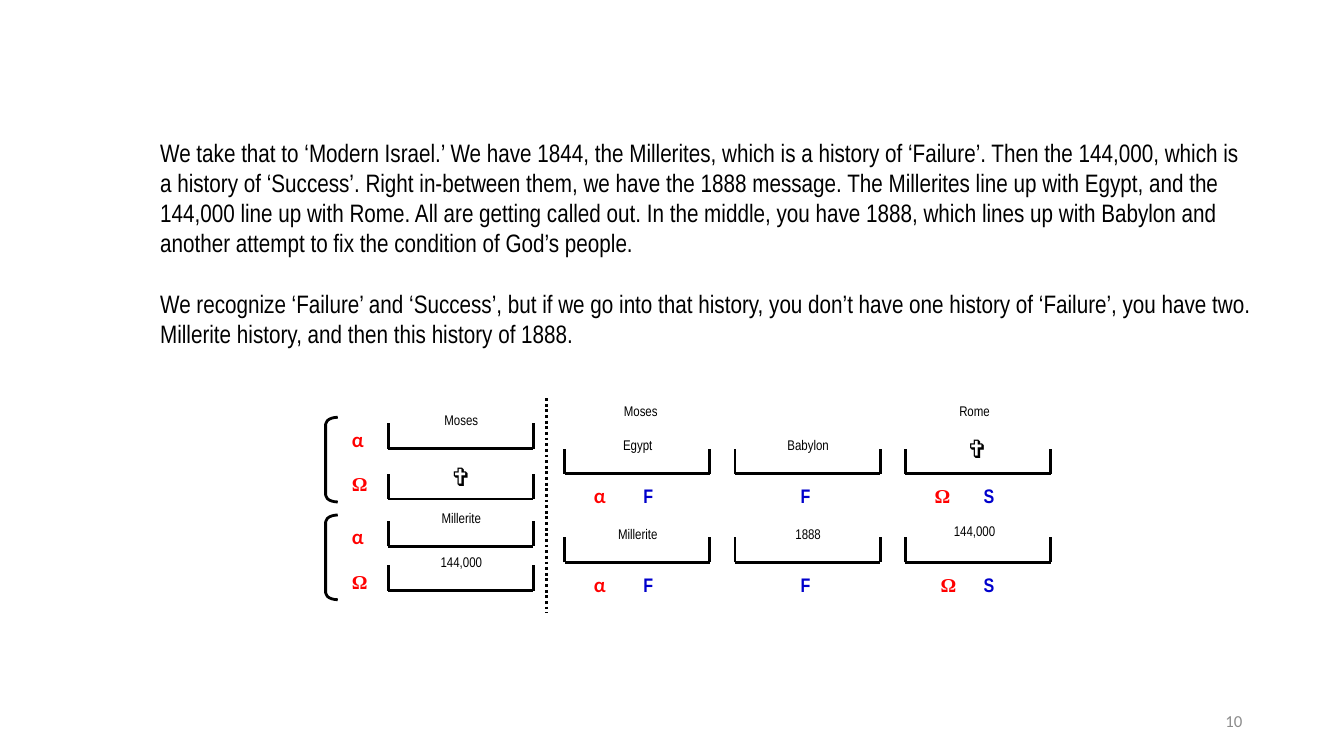
"""Build the slide on the lines of Modern Israel."""
from dataclasses import dataclass

from lxml.etree import SubElement
from pptx import Presentation
from pptx.dml.color import RGBColor as RGB
from pptx.enum.dml import MSO_LINE
from pptx.enum.shapes import MSO_CONNECTOR, MSO_SHAPE
from pptx.enum.text import MSO_ANCHOR as ANCHOR, PP_ALIGN as ALIGN
from pptx.oxml.ns import qn
from pptx.util import Inches, Pt


@dataclass(frozen=True)
class Style:
    font: str
    size: float
    color: str
    bold: bool = False


@dataclass(frozen=True)
class Theme:
    line: str = "000000"
    line_width: float = 2
    body: Style = Style("Arial Narrow", 18, "000000")
    label: Style = Style("Arial Narrow", 10, "000000")
    cross: Style = Style("Arial", 18, "000000")
    alpha: Style = Style("Lato", 14, "FF0000", True)
    omega: Style = Style("Times New Roman", 14, "FF0000", True)
    outcome: Style = Style("Arial Narrow", 14, "0000CC", True)
    number: Style = Style("Calibri", 12, "8C8C8C")


@dataclass(frozen=True)
class Tray:
    x: float
    base: float
    text: str
    dx: float = 0.35
    rise: float = 0.41


@dataclass(frozen=True)
class Mark:
    x: float
    y: float
    text: str


THEME = Theme()
TRAY_WIDTH, TRAY_DEPTH = 1.44, 0.25
LEFT, RIGHT, STEP = 3.85, 5.6, 1.69
CROSS = "✞"
COLUMNS = [RIGHT + i * STEP for i in range(3)]
UPPER, LOWER = 4.7, 5.58
MARK_DROP = 0.06

PARAGRAPHS = (
    "We take that to ‘Modern Israel.’ We have 1844, the Millerites, which is a history of "
    "‘Failure’. Then the 144,000, which is a history of ‘Success’. Right in-between them, we "
    "have the 1888 message. The Millerites line up with Egypt, and the 144,000 line up with "
    "Rome. All are getting called out. In the middle, you have 1888, which lines up with "
    "Babylon and another attempt to fix the condition of God’s people.",
    "We recognize ‘Failure’ and ‘Success’, but if we go into that history, you don’t have one "
    "history of ‘Failure’, you have two. Millerite history, and then this history of 1888.",
)
TRAYS = (
    Tray(LEFT, 4.45, "Moses"),
    Tray(LEFT, 4.95, CROSS),
    Tray(LEFT, 5.42, "Millerite"),
    Tray(LEFT, 5.86, "144,000"),
    Tray(COLUMNS[0], UPPER, "Egypt"),
    Tray(COLUMNS[1], UPPER, "Babylon"),
    Tray(COLUMNS[2], UPPER, CROSS, 0.34, 0.44),
    Tray(COLUMNS[0], LOWER, "Millerite"),
    Tray(COLUMNS[1], LOWER, "1888"),
    Tray(COLUMNS[2], LOWER, "144,000", 0.31, 0.44),
)
HEADINGS = (Mark(5.98, 3.95, "Moses"), Mark(9.29, 3.95, "Rome"))
GREEK = (
    Mark(3.45, 4.2, "α"),
    Mark(3.45, 4.64, "Ω"),
    Mark(3.45, 5.17, "α"),
    Mark(3.45, 5.61, "Ω"),
    Mark(5.85, UPPER + MARK_DROP, "α"),
    Mark(5.85, LOWER + MARK_DROP, "α"),
    Mark(9.23, UPPER + MARK_DROP, "Ω"),
    Mark(9.29, LOWER + MARK_DROP, "Ω"),
)
OUTCOMES = tuple(
    Mark(x, base + MARK_DROP, text)
    for base in (UPPER, LOWER)
    for x, text in ((6.29, "F"), (7.85, "F"), (9.67, "S"))
)
BRACKET_TOPS = (4.14, 5.11)


def add_text(s, *texts: str, x: float, y: float, w: float, h: float, style: Style,
             align=ALIGN.LEFT, anchor=ANCHOR.TOP, inset: float | None = 0.04,
             gap: float = 0) -> None:
    """Add a text box with one paragraph per text."""
    tf = s.shapes.add_textbox(Inches(x), Inches(y), Inches(w), Inches(h)).text_frame
    tf.word_wrap = True
    tf.vertical_anchor = anchor
    if inset is not None:
        tf.margin_left = tf.margin_right = Inches(inset)
        tf.margin_top = tf.margin_bottom = Inches(inset)
    for i, text in enumerate(texts):
        p = tf.add_paragraph() if i else tf.paragraphs[0]
        p.alignment = align
        p.space_before = Pt(gap if i else 0)
        r = p.add_run()
        r.text = text
        r.font.name = style.font
        r.font.size = Pt(style.size)
        r.font.bold = style.bold
        r.font.color.rgb = RGB.from_string(style.color)


def set_line(sp) -> None:
    """Give a shape or connector the theme line."""
    sp.line.color.rgb = RGB.from_string(THEME.line)
    sp.line.width = Pt(THEME.line_width)


def add_line(s, x1: float, y1: float, x2: float, y2: float, dotted: bool = False) -> None:
    """Draw a straight line without a shadow."""
    sp = s.shapes.add_connector(MSO_CONNECTOR.STRAIGHT, Inches(x1), Inches(y1),
                                Inches(x2), Inches(y2))
    set_line(sp)
    if dotted:
        sp.line.dash_style = MSO_LINE.ROUND_DOT
    SubElement(sp._element.spPr, qn("a:effectLst"))


def add_tray(s, tray: Tray) -> None:
    """Draw an open-topped tray and its label."""
    right = tray.x + TRAY_WIDTH
    add_line(s, tray.x, tray.base, right, tray.base)
    for x in (right, tray.x):
        add_line(s, x, tray.base, x, tray.base - TRAY_DEPTH)
    add_text(s, tray.text, x=tray.x + tray.dx, y=tray.base - tray.rise, w=0.75, h=0.31,
             style=THEME.cross if tray.text == CROSS else THEME.label, align=ALIGN.CENTER)


def add_bracket(s, top: float) -> None:
    """Draw a left bracket joining two trays."""
    sp = s.shapes.add_shape(MSO_SHAPE.LEFT_BRACKET, Inches(3.23), Inches(top),
                            Inches(0.12), Inches(0.84))
    sp.adjustments[0] = 0.56
    sp.shadow.inherit = False
    sp.fill.background()
    set_line(sp)


def main() -> None:
    """Build and save the slide."""
    prs = Presentation()
    prs.slide_width, prs.slide_height = Inches(13.33), Inches(7.5)
    s = prs.slides.add_slide(prs.slide_layouts[6])
    add_text(s, "10", x=9.42, y=6.95, w=3, h=0.4, style=THEME.number,
             align=ALIGN.RIGHT, anchor=ANCHOR.MIDDLE, inset=None)
    add_text(s, *PARAGRAPHS, x=1.49, y=1.31, w=11.07, h=2.22, style=THEME.body,
             inset=None, gap=21.5)
    for tray in TRAYS:
        add_tray(s, tray)
    for top in BRACKET_TOPS:
        add_bracket(s, top)
    for m in HEADINGS:
        add_text(s, m.text, x=m.x, y=m.y, w=0.75, h=0.25, style=THEME.label,
                 align=ALIGN.CENTER)
    for m in GREEK:
        add_text(s, m.text, x=m.x, y=m.y, w=0.33, h=0.25,
                 style=THEME.alpha if m.text == "α" else THEME.omega)
    for m in OUTCOMES:
        add_text(s, m.text, x=m.x, y=m.y, w=0.28, h=0.25, style=THEME.outcome,
                 align=ALIGN.CENTER)
    add_line(s, 5.42, 3.95, 5.42, 6.08, dotted=True)
    prs.save("out.pptx")


if __name__ == "__main__":
    main()
